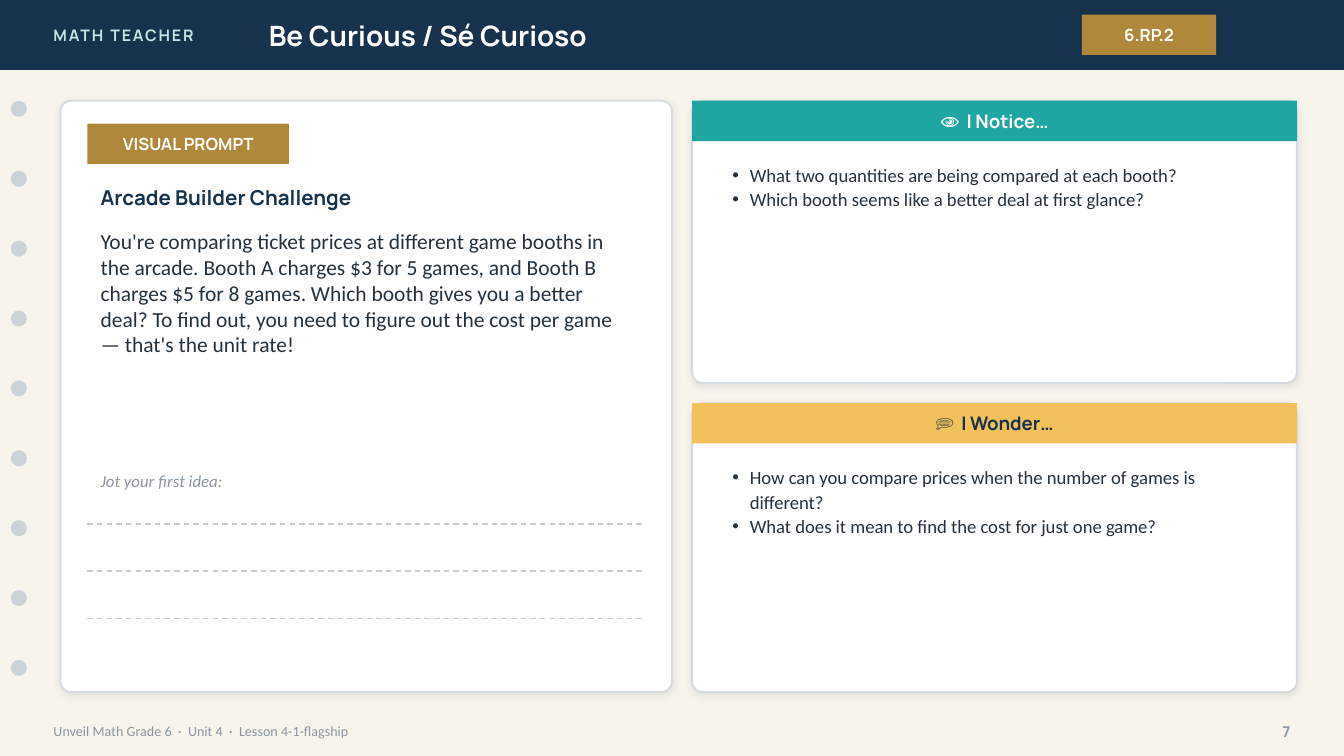
from dataclasses import dataclass

from lxml.etree import SubElement
from pptx import Presentation
from pptx.dml.color import RGBColor
from pptx.enum.dml import MSO_LINE
from pptx.enum.shapes import MSO_CONNECTOR as Connector, MSO_SHAPE as Preset
from pptx.enum.text import MSO_ANCHOR as Anchor, MSO_AUTO_SIZE as AutoSize, PP_ALIGN as Align
from pptx.oxml.ns import qn
from pptx.util import Emu, Pt

EMU_PER_PX = 9144


@dataclass(frozen=True)
class Style:
    font: str
    size: float
    color: str
    bold: bool = False
    italic: bool = False


@dataclass(frozen=True)
class Theme:
    paper: str = "F7F4EC"
    navy: str = "17324D"
    gold: str = "B0883B"
    teal: str = "1FA6A2"
    yellow: str = "F2C15B"
    white: str = "FFFFFF"
    dot: str = "CBD3D9"
    rule: str = "C7CDD2"
    border: str = "D6DBDF"
    shadow: str = "1C2E42"
    brand: Style = Style("Manrope", 8.5, "BFE6E2", bold=True)
    title: Style = Style("Manrope", 15, "FFFFFF", bold=True)
    tag: Style = Style("Manrope", 9, "FFFFFF", bold=True)
    heading: Style = Style("Manrope", 11, "17324D", bold=True)
    notice: Style = Style("Manrope", 10, "FFFFFF", bold=True)
    wonder: Style = Style("Manrope", 10, "17324D", bold=True)
    prompt: Style = Style("Calibri", 11.5, "24323F")
    question: Style = Style("Calibri", 10, "24323F")
    jot: Style = Style("Calibri", 9, "8A96A3", italic=True)
    footer: Style = Style("Calibri", 7.5, "8A96A3")
    number: Style = Style("Manrope", 8, "8A96A3", bold=True)


THEME = Theme()


def px(value):
    return Emu(value * EMU_PER_PX)


def rgb(color):
    return RGBColor.from_string(color)


def write(box, lines, style, align=Align.LEFT, anchor=Anchor.MIDDLE, bullets=False):
    frame = box.text_frame
    frame.word_wrap = True
    frame.auto_size = AutoSize.NONE
    frame.vertical_anchor = anchor
    frame.text = "\n".join(lines)
    for para in frame.paragraphs:
        para.alignment = align
        if bullets:
            add_bullet(para)
        font = para.font
        font.name, font.size = style.font, Pt(style.size)
        font.bold, font.italic = style.bold, style.italic
        font.color.rgb = rgb(style.color)
    return box


def add_bullet(para):
    para.space_before = Pt(0)
    para.line_spacing = 1.1
    props = para._p.get_or_add_pPr()
    props.set("marL", str(px(13)))
    props.set("indent", str(-px(13)))
    SubElement(props, qn("a:buChar"), char="•")


def add_label(page, place, text, style, **layout):
    box = page.shapes.add_textbox(*map(px, place))
    return write(box, [text], style, **layout)


def fill_placeholder(page, box, place, lines, style, **layout):
    box.left, box.top, box.width, box.height = map(px, place)
    page.shapes._spTree.append(box._element)
    write(box, lines, style, **layout)


def add_block(page, place, fill, preset=Preset.RECTANGLE):
    block = page.shapes.add_shape(preset, *map(px, place))
    block.shadow.inherit = False
    block.fill.solid()
    block.fill.fore_color.rgb = rgb(fill)
    block.line.fill.background()
    return block


def add_tag(page, place, text, fill, style):
    write(add_block(page, place, fill), [text], style, align=Align.CENTER)


def add_card(page, place):
    card = add_block(page, place, THEME.white, Preset.ROUNDED_RECTANGLE)
    card.adjustments[0] = 8 / min(place[2:])
    card.line.color.rgb = rgb(THEME.border)
    card.line.width = Pt(1)
    effects = card._element.spPr.find(qn("a:effectLst"))
    shadow = SubElement(effects, qn("a:outerShdw"), blurRad=str(Pt(4)),
                        dist=str(Pt(1)), dir="5400000", rotWithShape="0")
    color = SubElement(shadow, qn("a:srgbClr"), val=THEME.shadow)
    SubElement(color, qn("a:alpha"), val="10000")


def add_writing_line(page, left, right, top):
    line = page.shapes.add_connector(Connector.STRAIGHT, *map(px, (left, top, right, top)))
    line.line.color.rgb = rgb(THEME.rule)
    line.line.width = Pt(0.75)
    line.line.dash_style = MSO_LINE.DASH
    SubElement(line._element.spPr, qn("a:effectLst"))


def add_question_card(page, body, top, height, heading, fill, style, questions):
    add_card(page, (515, top, 450, height))
    add_tag(page, (515, top, 450, 30), heading, fill, style)
    fill_placeholder(page, body, (535, top + 40, 410, height - 50), questions,
                     THEME.question, anchor=Anchor.TOP, bullets=True)


def add_header(page, title):
    add_block(page, (0, 0, 1000, 52), THEME.navy)
    brand = add_label(page, (30, 0, 240, 52), "MATH TEACHER", THEME.brand)
    for span in brand.text_frame.paragraphs[0].runs:
        span._r.get_or_add_rPr().set("spc", "100")
    fill_placeholder(page, title, (190, 0, 560, 52), ["Be Curious / Sé Curioso"], THEME.title)
    add_tag(page, (805, 11, 100, 30), "6.RP.2", THEME.gold, THEME.tag)


def add_binder_holes(page):
    for index in range(9):
        add_block(page, (8, 75 + 52 * index, 12, 12), THEME.dot, Preset.OVAL)


def add_footer(page):
    add_label(page, (30, 530, 700, 28),
              "Unveil Math Grade 6  ·  Unit 4  ·  Lesson 4-1-flagship", THEME.footer)
    add_label(page, (920, 530, 50, 28), "7", THEME.number, align=Align.RIGHT)


def add_prompt_card(page):
    add_card(page, (45, 75, 455, 440))
    add_tag(page, (65, 92, 150, 30), "VISUAL PROMPT", THEME.gold, THEME.tag)
    add_label(page, (65, 132, 415, 30), "Arcade Builder Challenge", THEME.heading)
    add_label(page, (65, 165, 415, 170),
              "You're comparing ticket prices at different game booths in the arcade. "
              "Booth A charges $3 for 5 games, and Booth B charges $5 for 8 games. "
              "Which booth gives you a better deal? To find out, you need to figure out "
              "the cost per game — that's the unit rate!", THEME.prompt, anchor=Anchor.TOP)
    add_label(page, (65, 345, 400, 25), "Jot your first idea:", THEME.jot)
    for index in range(3):
        add_writing_line(page, 65, 480, 390 + 35 * index)


def main():
    deck = Presentation()
    deck.slide_width = px(1000)
    deck.slide_height = Emu(px(1000) * 9 // 16)
    page = deck.slides.add_slide(deck.slide_layouts.get_by_name("Two Content"))
    page.background.fill.solid()
    page.background.fill.fore_color.rgb = rgb(THEME.paper)
    title, notice_body, wonder_body = list(page.placeholders)

    add_header(page, title)
    add_binder_holes(page)
    add_footer(page)
    add_prompt_card(page)
    add_question_card(page, notice_body, 75, 210, "👁  I Notice…", THEME.teal, THEME.notice,
                      ["What two quantities are being compared at each booth?",
                       "Which booth seems like a better deal at first glance?"])
    add_question_card(page, wonder_body, 300, 215, "💭  I Wonder…", THEME.yellow, THEME.wonder,
                      ["How can you compare prices when the number of games is different?",
                       "What does it mean to find the cost for just one game?"])
    deck.save("out.pptx")


if __name__ == "__main__":
    main()
